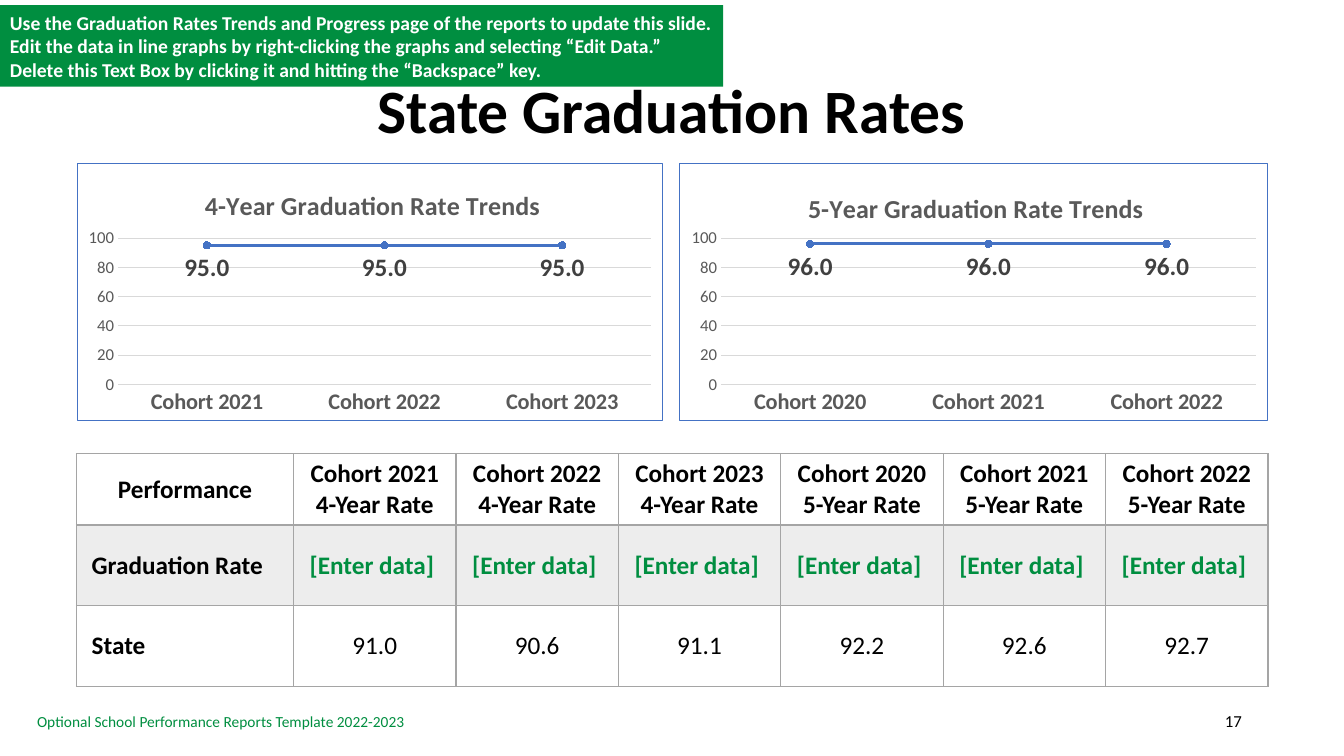
"""Build the State Graduation Rates slide with two trend charts and a rate table."""
from dataclasses import dataclass

from lxml.etree import SubElement
from pptx import Presentation
from pptx.chart.data import CategoryChartData
from pptx.dml.color import RGBColor
from pptx.enum.chart import XL_CHART_TYPE, XL_LABEL_POSITION, XL_MARKER_STYLE, XL_TICK_MARK
from pptx.enum.shapes import MSO_SHAPE
from pptx.enum.text import MSO_ANCHOR, PP_ALIGN
from pptx.oxml import parse_xml
from pptx.oxml.ns import nsdecls, qn
from pptx.slide import Slide
from pptx.table import _Cell
from pptx.text.text import Font, TextFrame
from pptx.util import Pt


@dataclass(frozen=True)
class Theme:
    font: str = "Calibri"
    green: str = "008E40"
    blue: str = "4472C4"
    black: str = "000000"
    white: str = "FFFFFF"
    chart_text: str = "595959"
    label_text: str = "404040"
    gridline: str = "D9D9D9"
    border: str = "A5A5A5"
    band: str = "EDEDED"
    title_size: float = 44
    chart_title_size: float = 18.6
    table_size: float = 18
    category_size: float = 16
    banner_size: float = 14
    small_size: float = 12
    footer_size: float = 11


@dataclass(frozen=True)
class Trend:
    title: str
    series: str
    cohorts: tuple[str, ...]
    rate: float
    left: float
    width: float
    title_top: float


@dataclass(frozen=True)
class Label:
    text: str
    left: float
    top: float
    width: float
    height: float
    size: float
    color: str
    align: PP_ALIGN
    wrap: bool


THEME = Theme()
TRENDS = (
    Trend("4-Year Graduation Rate Trends", "4-Year Graduation Rate Trends",
          ("Cohort 2021", "Cohort 2022", "Cohort 2023"), 95, 54.7, 419, 0.075),
    Trend("5-Year Graduation Rate Trends", "Series 1",
          ("Cohort 2020", "Cohort 2021", "Cohort 2022"), 96, 485.3, 420.5, 0.087),
)
LABELS = (
    Label("Optional School Performance Reports Template 2022-2023", 19.4, 504.7, 280.8, 20.9,
          THEME.footer_size, THEME.green, PP_ALIGN.LEFT, False),
    Label("17", 678.2, 500.4, 216, 28.8, THEME.small_size, THEME.black, PP_ALIGN.RIGHT, True),
)
BANNER = (
    "Use the Graduation Rates Trends and Progress page of the reports to update this slide. "
    "Edit the data in line graphs by right-clicking the graphs and selecting “Edit Data.” "
    "Delete this Text Box by clicking it and hitting the “Backspace” key."
)
HEADINGS = (
    "Performance",
    *(f"{cohort}\n4-Year Rate" for cohort in TRENDS[0].cohorts),
    *(f"{cohort} 5-Year Rate" for cohort in TRENDS[1].cohorts),
)
ROWS = (
    HEADINGS,
    ("Graduation Rate", *["[Enter data] "] * 6),
    ("State", "91.0", "90.6", "91.1", "92.2", "92.6", "92.7"),
)
COLUMN_WIDTHS = (155, *[116] * 6)
ROW_HEIGHTS = (50.4, 57.6, 57.6)


def style_font(font: Font, size: float, color: str, bold: bool = False) -> None:
    font.name = THEME.font
    font.size = Pt(size)
    font.bold = bold
    font.color.rgb = RGBColor.from_string(color)


def style_text(frame: TextFrame, size: float, color: str, bold: bool, align: PP_ALIGN) -> None:
    for paragraph in frame.paragraphs:
        paragraph.alignment = align
        for run in paragraph.runs:
            style_font(run.font, size, color, bold)


def manual_layout(target: str, **fractions: float) -> object:
    modes = "".join(f'<c:{key}Mode val="edge"/>' for key in "xy")
    values = "".join(f'<c:{key} val="{value}"/>' for key, value in fractions.items())
    return parse_xml(f'<c:layout {nsdecls("c")}><c:manualLayout>{target}{modes}{values}'
                     "</c:manualLayout></c:layout>")


def add_title(slide: Slide) -> None:
    title = slide.shapes.title
    title.left, title.top, title.width, title.height = Pt(66), Pt(28.8), Pt(828), Pt(104.4)
    title.text_frame.text = "State Graduation Rates"
    title.text_frame.vertical_anchor = MSO_ANCHOR.MIDDLE
    title.text_frame.paragraphs[0].line_spacing = 0.9
    style_text(title.text_frame, THEME.title_size, THEME.black, True, PP_ALIGN.CENTER)


def add_banner(slide: Slide) -> None:
    banner = slide.shapes.add_shape(MSO_SHAPE.RECTANGLE, Pt(0), Pt(3.6), Pt(516.5), Pt(58.3))
    banner.shadow.inherit = False
    banner.fill.solid()
    banner.fill.fore_color.rgb = RGBColor.from_string(THEME.green)
    banner.line.fill.background()
    banner.text_frame.word_wrap = True
    banner.text_frame.text = BANNER
    style_text(banner.text_frame, THEME.banner_size, THEME.white, True, PP_ALIGN.LEFT)


def add_label(slide: Slide, label: Label) -> None:
    box = slide.shapes.add_textbox(Pt(label.left), Pt(label.top), Pt(label.width), Pt(label.height))
    box.text_frame.word_wrap = label.wrap
    box.text_frame.vertical_anchor = MSO_ANCHOR.MIDDLE
    box.text_frame.text = label.text
    style_text(box.text_frame, label.size, label.color, False, label.align)


def add_trend(slide: Slide, trend: Trend) -> None:
    data = CategoryChartData()
    data.categories = trend.cohorts
    data.add_series(trend.series, [trend.rate] * len(trend.cohorts))
    chart = slide.shapes.add_chart(XL_CHART_TYPE.LINE_MARKERS, Pt(trend.left), Pt(116.6),
                                   Pt(trend.width), Pt(184), data).chart
    style_font(chart.font, 10, THEME.black)
    chart.has_legend = False
    chart.has_title = True
    heading = chart.chart_title.text_frame
    heading.text = trend.title
    style_text(heading, THEME.chart_title_size, THEME.chart_text, True, PP_ALIGN.CENTER)
    blue, gridline = RGBColor.from_string(THEME.blue), RGBColor.from_string(THEME.gridline)

    cohorts, rates = chart.category_axis, chart.value_axis
    style_font(cohorts.tick_labels.font, THEME.category_size, THEME.chart_text, True)
    style_font(rates.tick_labels.font, THEME.small_size, THEME.chart_text)
    for axis in (cohorts, rates):
        axis.major_tick_mark = axis.minor_tick_mark = XL_TICK_MARK.NONE
    rates.minimum_scale, rates.maximum_scale, rates.major_unit = 0, 100, 20
    rates.format.line.fill.background()
    for line in (cohorts.format.line, rates.major_gridlines.format.line):
        line.color.rgb = gridline
        line.width = Pt(0.75)

    plot = chart.plots[0]
    plot.vary_by_categories = False
    series = plot.series[0]
    series.smooth = False
    series.format.line.color.rgb = blue
    series.format.line.width = Pt(2.25)
    series.marker.style, series.marker.size = XL_MARKER_STYLE.CIRCLE, 5
    series.marker.format.fill.solid()
    series.marker.format.fill.fore_color.rgb = blue
    series.marker.format.line.color.rgb = blue
    labels = series.data_labels
    labels.show_value = True
    labels.position = XL_LABEL_POSITION.BELOW
    labels.number_format, labels.number_format_is_linked = "#,##0.0", False
    style_font(labels.font, THEME.table_size, THEME.label_text, True)

    space = chart.element
    title, area = space.find(f".//{qn('c:title')}"), space.find(f".//{qn('c:plotArea')}")
    for part in (title, area):
        for layout in part.findall(qn("c:layout")):
            part.remove(layout)
    title.find(qn("c:tx")).addnext(manual_layout("", x=0.21, y=trend.title_top))
    area.insert(0, manual_layout('<c:layoutTarget val="inner"/>', x=0.07, y=0.29, w=0.91, h=0.57))
    space.find(qn("c:chart")).addnext(parse_xml(
        f'<c:spPr {nsdecls("c", "a")}><a:noFill/><a:ln w="{Pt(0.75)}"><a:solidFill>'
        f'<a:srgbClr val="{THEME.blue}"/></a:solidFill></a:ln></c:spPr>'))


def set_borders(cell: _Cell, widths: dict[str, float]) -> None:
    properties = cell._tc.get_or_add_tcPr()
    for position, (side, width) in enumerate(widths.items()):
        line = SubElement(properties, qn(f"a:ln{side}"), w=str(Pt(width)))
        SubElement(SubElement(line, qn("a:solidFill")), qn("a:srgbClr"), val=THEME.border)
        properties.insert(position, line)


def add_rates(slide: Slide) -> None:
    rates = slide.shapes.add_table(len(ROWS), len(HEADINGS), Pt(54.7), Pt(324),
                                   Pt(sum(COLUMN_WIDTHS)), Pt(sum(ROW_HEIGHTS))).table
    rates.first_row = rates.horz_banding = False
    for column, width in zip(rates.columns, COLUMN_WIDTHS):
        column.width = Pt(width)
    for r, (texts, height) in enumerate(zip(ROWS, ROW_HEIGHTS)):
        rates.rows[r].height = Pt(height)
        for c, text in enumerate(texts):
            cell = rates.cell(r, c)
            cell.text_frame.text = text
            cell.vertical_anchor = MSO_ANCHOR.MIDDLE
            cell.margin_left = cell.margin_right = Pt(10.8)
            cell.margin_top = cell.margin_bottom = Pt(3.6)
            cell.fill.solid()
            cell.fill.fore_color.rgb = RGBColor.from_string(THEME.band if r == 1 else THEME.white)
            style_text(cell.text_frame, THEME.table_size,
                       THEME.green if r == 1 and c else THEME.black, r < 2 or c == 0,
                       PP_ALIGN.LEFT if r and c == 0 else PP_ALIGN.CENTER)
            set_borders(cell, {"L": 1, "R": 1, "T": 2 if r == 1 else 1, "B": 2 if r == 0 else 1})


def main() -> None:
    deck = Presentation()
    deck.slide_width, deck.slide_height = Pt(960), Pt(540)
    slide = deck.slides.add_slide(deck.slide_layouts[5])
    add_title(slide)
    add_banner(slide)
    for trend in TRENDS:
        add_trend(slide, trend)
    add_rates(slide)
    for label in LABELS:
        add_label(slide, label)
    deck.save("out.pptx")


if __name__ == "__main__":
    main()
